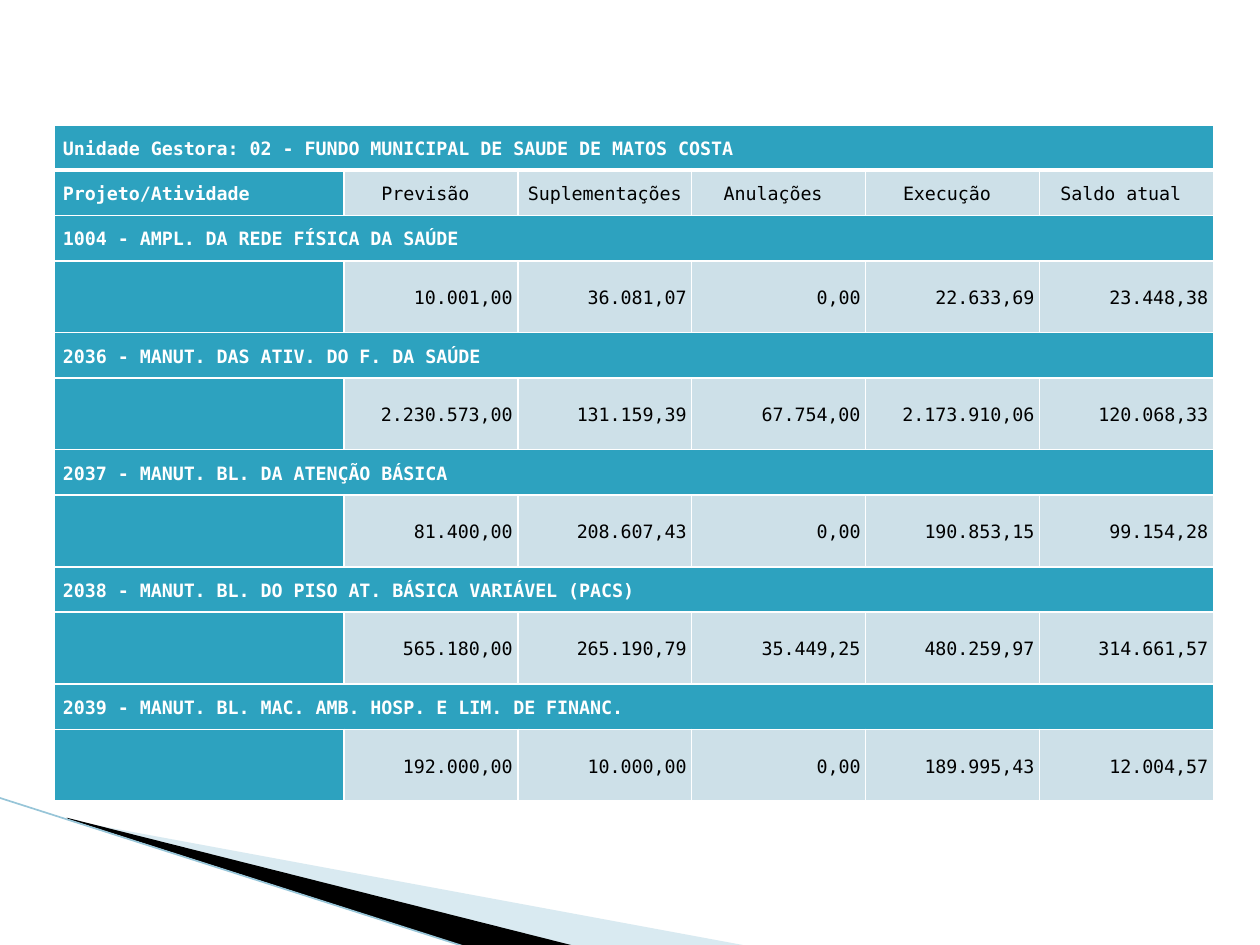
from lxml import etree
from pptx import Presentation
from pptx.dml.color import RGBColor
from pptx.enum.shapes import MSO_CONNECTOR
from pptx.enum.text import MSO_ANCHOR, PP_ALIGN
from pptx.oxml.ns import qn
from pptx.util import Inches, Pt

LINE = MSO_CONNECTOR.STRAIGHT
MIDDLE = MSO_ANCHOR.MIDDLE
LEFT, CENTER, RIGHT = PP_ALIGN.LEFT, PP_ALIGN.CENTER, PP_ALIGN.RIGHT

COLORS = {"teal": "2DA2BF", "pale": "CDE0E8", "white": "FFFFFF",
          "black": "000000", "wing": "A0CBDC", "edge": "97C5D8"}
FONT, SIZE = "DejaVu Sans Mono", 10.5
WIDE, EVEN = (0.07, 0.01), (0.04, 0.04)  # cell margins: sides, top and bottom

TITLE = "Unidade Gestora: 02 - FUNDO MUNICIPAL DE SAUDE DE MATOS COSTA"
HEADS = ["Projeto/Atividade", "Previsão ", "Suplementações ", "Anulações ",
         "Execução ", "Saldo atual "]
ITEMS = [
    ("1004 - AMPL. DA REDE FÍSICA DA SAÚDE",
     ["10.001,00", "36.081,07", "0,00", "22.633,69", "23.448,38"]),
    ("2036 - MANUT. DAS ATIV. DO F. DA SAÚDE",
     ["2.230.573,00", "131.159,39", "67.754,00", "2.173.910,06", "120.068,33"]),
    ("2037 - MANUT. BL. DA ATENÇÃO BÁSICA",
     ["81.400,00", "208.607,43", "0,00", "190.853,15", "99.154,28"]),
    ("2038 - MANUT. BL. DO PISO AT. BÁSICA VARIÁVEL (PACS)",
     ["565.180,00", "265.190,79", "35.449,25", "480.259,97", "314.661,57"]),
    ("2039 - MANUT. BL. MAC. AMB. HOSP. E LIM. DE FINANC.",
     ["192.000,00", "10.000,00", "0,00", "189.995,43", "12.004,57"]),
]


def rgb(name):
    return RGBColor.from_string(COLORS[name])


class Deck:
    def __init__(self, slide):
        self.slide = slide
        self.shapes = slide.shapes

    def wedge(self, points, color, alpha=None):
        spots = [(Inches(x), Inches(y)) for x, y in points]
        pen = self.shapes.build_freeform(*spots[0], scale=1.0)
        pen.add_line_segments(spots[1:], close=True)
        shape = pen.convert_to_shape()
        shape.shadow.inherit = False
        shape.line.fill.background()
        shape.fill.solid()
        shape.fill.fore_color.rgb = rgb(color)
        if alpha:
            tint = shape.fill._xPr.find(".//" + qn("a:srgbClr"))
            etree.SubElement(tint, qn("a:alpha")).set("val", str(alpha * 1000))

    def line(self, start, end, color, width):
        ends = [Inches(v) for v in (*start, *end)]
        line = self.shapes.add_connector(LINE, *ends)
        line.line.color.rgb = rgb(color)
        line.line.width = Pt(width)
        etree.SubElement(line._element.spPr, qn("a:effectLst"))

    def table(self, left, top, cols, rows):
        frame = self.shapes.add_table(len(rows), len(cols), Inches(left), Inches(top),
                                      Inches(sum(cols)), Inches(sum(rows)))
        table = frame.table
        for col, width in zip(table.columns, cols):
            col.width = Inches(width)
        for row, height in zip(table.rows, rows):
            row.height = Inches(height)
        return table

    def border(self, cell, widths):
        props = cell._tc.get_or_add_tcPr()
        for side, width in zip("LRTB", widths):
            edge = etree.SubElement(props, qn("a:ln" + side), w=str(Pt(width)))
            fill = etree.SubElement(edge, qn("a:solidFill"))
            etree.SubElement(fill, qn("a:srgbClr"), val=COLORS["white"])

    def cell(self, cell, fill, widths=(1, 1, 1, 1)):
        self.border(cell, widths)
        cell.fill.solid()
        cell.fill.fore_color.rgb = rgb(fill)

    def text(self, cell, text, align, margins, color="black", bold=False):
        side, edge = (Inches(v) for v in margins)
        cell.margin_left = cell.margin_right = side
        cell.margin_top = cell.margin_bottom = edge
        cell.vertical_anchor = MIDDLE
        para = cell.text_frame.paragraphs[0]
        para.alignment = align
        para.line_spacing = 1.15
        run = para.add_run()
        run.text = text
        run.font.name, run.font.size, run.font.bold = FONT, Pt(SIZE), bold
        run.font.color.rgb = rgb(color)

    def label(self, cell, text):
        self.text(cell, text, LEFT, WIDE, "white", True)

    def band(self, table, row, text):
        first, last = table.cell(row, 0), table.cell(row, len(table.columns) - 1)
        first.merge(last)
        self.label(first, text)


def main():
    prs = Presentation()
    prs.slide_width, prs.slide_height = Inches(10), Inches(7.5)
    deck = Deck(prs.slides.add_slide(prs.slide_layouts[6]))

    # Corner decoration
    deck.wedge([(0.55, 6.51), (5.95, 7.51), (4.56, 7.51), (0.55, 6.5)], "wing", 40)
    deck.wedge([(0.53, 6.49), (4.57, 7.51), (3.72, 7.52), (0.54, 6.5)], "black")
    deck.line((-0.01, 6.33), (3.71, 7.52), "edge", 0.95)

    # Budget grid: title, heads, then a band and a value row per item
    rows = [0.36, 0.36] + [0.36, 0.57] * len(ITEMS)
    table = deck.table(0.43, 0.99, [2.3] + [1.38] * 5, rows)
    for r in range(len(rows)):
        widths = {0: (1, 1, 1, 3), 1: (1, 1, 3, 1)}.get(r, (1, 1, 1, 1))
        for c in range(len(HEADS)):
            pale = c > 0 and r % 2 == 1
            deck.cell(table.cell(r, c), "pale" if pale else "teal", widths)

    # Title and column heads
    deck.band(table, 0, TITLE)
    deck.label(table.cell(1, 0), HEADS[0])
    for c, head in enumerate(HEADS[1:], 1):
        deck.text(table.cell(1, c), head, CENTER, WIDE)

    # Items
    for i, (name, values) in enumerate(ITEMS, 1):
        deck.band(table, 2 * i, name)
        for c, value in enumerate(values, 1):
            deck.text(table.cell(2 * i + 1, c), value, RIGHT, EVEN)

    prs.save("out.pptx")


if __name__ == "__main__":
    main()
